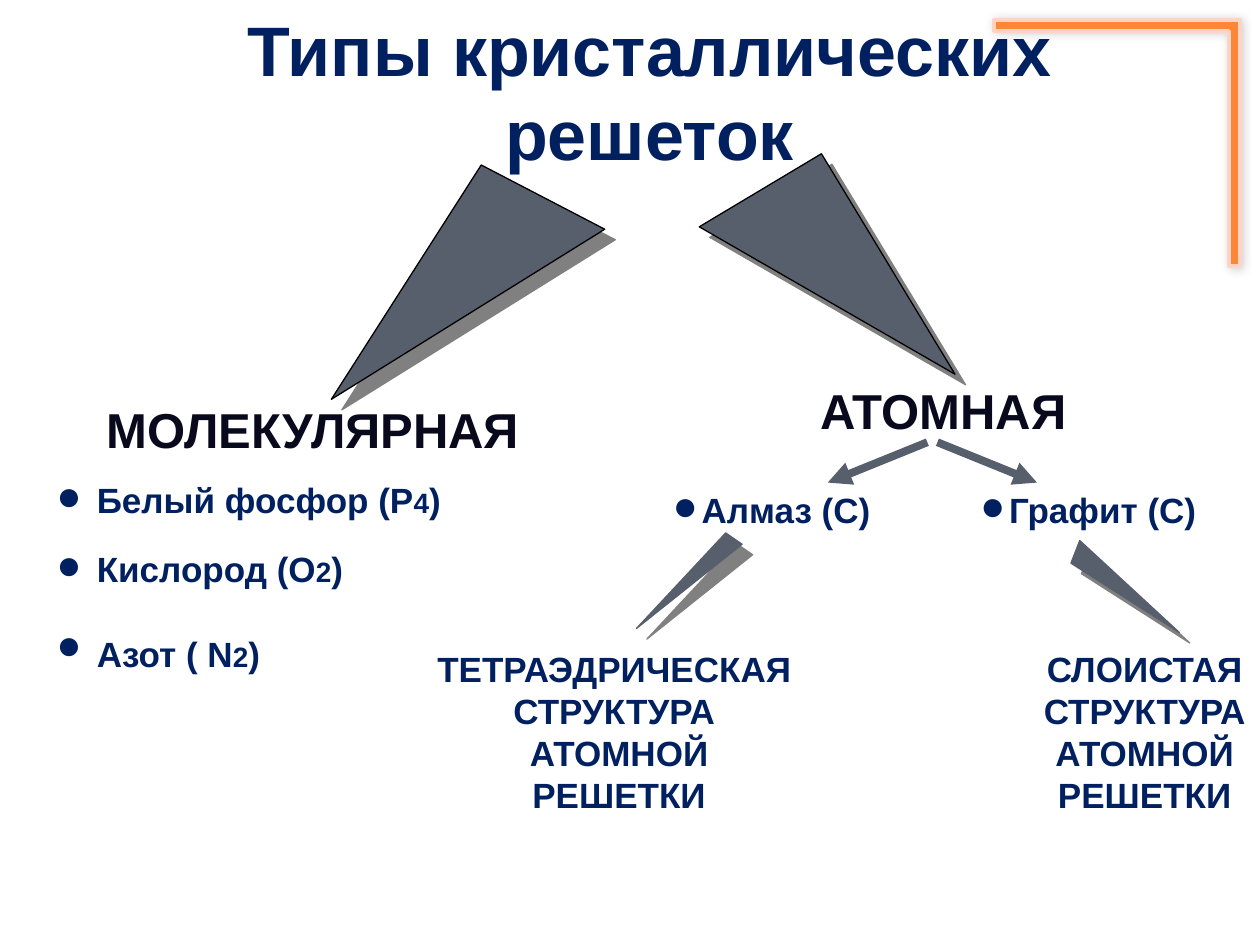
from dataclasses import dataclass

from pptx import Presentation
from pptx import util as u
from pptx.dml.color import RGBColor
from pptx.enum import shapes, text
from pptx.oxml import parse_xml
from pptx.oxml.ns import nsdecls, qn
from pptx.oxml.xmlchemy import OxmlElement


@dataclass(frozen=True)
class Theme:
    font: str = "Arial"
    navy: str = "002060"
    ink: str = "09091D"
    slate: str = "575F6D"
    black: str = "000000"
    gray: str = "808080"
    orange: str = "FE8637"
    peach: str = "FFD4C7"
    title: int = 40
    heading: int = 28
    bullet: int = 24
    body: int = 20
    index: int = 16


class Builder:
    def __init__(self, slide, theme):
        self.slide = slide
        self.theme = theme

    def text(self, box, lines, size, color=None, bold=True, wrap=False,
             align=None, gap=0):
        """Each line is split at "|"; every second piece is a small index."""
        sp = self.slide.shapes.add_textbox(*map(u.Inches, box))
        tf = sp.text_frame
        tf.word_wrap = wrap
        tf.auto_size = text.MSO_AUTO_SIZE.SHAPE_TO_FIT_TEXT
        for i, line in enumerate(lines):
            p = tf.add_paragraph() if i else tf.paragraphs[0]
            p.alignment = align
            if i and gap:
                p.space_before = u.Pt(gap)
            p.font.name = self.theme.font
            p.font.bold = bold
            p.font.color.rgb = RGBColor.from_string(color or self.theme.navy)
            pieces = line.split("|")
            if len(pieces) == 1:
                p.font.size = u.Pt(size)
            for n, piece in enumerate(pieces):
                r = p.add_run()
                r.text = piece
                if len(pieces) > 1:
                    r.font.size = u.Pt(self.theme.index if n % 2 else size)

    def centered(self, box, lines, size):
        self.text(box, lines, size, align=text.PP_ALIGN.CENTER)

    def bullet(self, left, top):
        self.text((left, top, 0.4, 0.5), ["●"], self.theme.bullet,
                  bold=False, wrap=True)

    def paint(self, sp, fill, line, width):
        sp.fill.solid()
        sp.fill.fore_color.rgb = RGBColor.from_string(fill)
        sp.line.color.rgb = RGBColor.from_string(line)
        sp.line.width = u.Pt(width)

    def shadow(self, sp, color, alpha, blur, dist):
        sp.shadow.inherit = False
        effects = sp._element.spPr.find(qn("a:effectLst"))
        effects.append(parse_xml(
            f'<a:outerShdw {nsdecls("a")} blurRad="{u.Pt(blur)}" '
            f'dist="{u.Pt(dist)}" dir="2700000" algn="ctr" rotWithShape="0">'
            f'<a:srgbClr val="{color}"><a:alpha val="{alpha * 1000}"/>'
            f'</a:srgbClr></a:outerShdw>'))

    def wedge(self, points, line):
        start, *rest = [tuple(map(u.Inches, pt)) for pt in points]
        fb = self.slide.shapes.build_freeform(*start)
        fb.add_line_segments(rest, close=True)
        sp = fb.convert_to_shape()
        self.paint(sp, self.theme.slate, line, 0.75)
        self.shadow(sp, self.theme.gray, 100, 0, 8.5)

    def arrow(self, start, end):
        cx = self.slide.shapes.add_connector(
            shapes.MSO_CONNECTOR.STRAIGHT, *map(u.Inches, start + end))
        cx.line.color.rgb = RGBColor.from_string(self.theme.slate)
        cx.line.width = u.Pt(4.5)
        head = OxmlElement("a:tailEnd")
        head.set("type", "triangle")
        cx.line._get_or_add_ln().append(head)
        cx._element.spPr.append(OxmlElement("a:effectLst"))

    def corner(self, box):
        sp = self.slide.shapes.add_shape(
            shapes.MSO_SHAPE.CORNER, *map(u.Inches, box))
        for i in range(2):
            sp.adjustments[i] = 0.044
        xfrm = sp._element.spPr.find(qn("a:xfrm"))
        xfrm.set("flipH", "1")
        xfrm.set("flipV", "1")
        self.paint(sp, self.theme.orange, self.theme.peach, 2)
        self.shadow(sp, self.theme.black, 20, 6, 1)


def main():
    prs = Presentation()
    prs.slide_width, prs.slide_height = u.Inches(10), u.Inches(7.5)
    t = Theme()
    b = Builder(prs.slides.add_slide(prs.slide_layouts[6]), t)

    # Lattice type headings and title
    b.text((0.75, 3.12, 3.51, 0.57), ["МОЛЕКУЛЯРНАЯ"], t.heading, t.ink, wrap=True)
    b.text((6.41, 2.97, 2.21, 0.57), ["АТОМНАЯ"], t.heading, t.ink, wrap=True)
    b.centered((1.85, 0, 6.61, 1.43), ["Типы кристаллических", "решеток"], t.title)

    # Wedges from the title to the two types
    b.wedge([(3.82, 1.31), (2.63, 3.17), (4.8, 1.82)], t.black)
    b.wedge([(5.55, 1.8), (7.58, 2.97), (6.52, 1.22)], t.black)

    # Molecular examples
    for top in (3.67, 4.22, 4.85):
        b.bullet(0.35, top)
    b.text((0.67, 3.75, 2.94, 0.43), ["Белый фосфор (Р|4|)"], t.body)
    b.text((0.67, 4.3, 2.16, 1.1), ["Кислород (О|2|)", "Азот ( N|2|)"],
           t.body, gap=24)

    # Atomic examples
    for left, width, name in ((5.24, 1.54, "Алмаз (С)"), (7.68, 1.69, "Графит (С)")):
        b.bullet(left, 3.75)
        b.text((left + 0.23, 3.83, width, 0.43), [name], t.body)

    # Wedges down to the structures
    b.wedge([(5.76, 4.23), (5.05, 4.99), (5.89, 4.32)], t.slate)
    b.wedge([(8.5, 4.47), (9.36, 5.02), (8.57, 4.29)], t.slate)

    # Structures
    b.centered((3.35, 5.09, 3.05, 1.43),
               ["ТЕТРАЭДРИЧЕСКАЯ", "СТРУКТУРА", " АТОМНОЙ", " РЕШЕТКИ"], t.body)
    b.centered((8.17, 5.09, 1.83, 1.43),
               ["СЛОИСТАЯ", "СТРУКТУРА", "АТОМНОЙ", "РЕШЕТКИ"], t.body)

    # Arrows to the atomic examples
    b.arrow((7.36, 3.51), (6.57, 3.83))
    b.arrow((7.44, 3.51), (8.23, 3.83))

    # Corner ornament
    b.corner((7.89, 0.16, 1.95, 1.95))

    prs.save("out.pptx")


if __name__ == "__main__":
    main()
